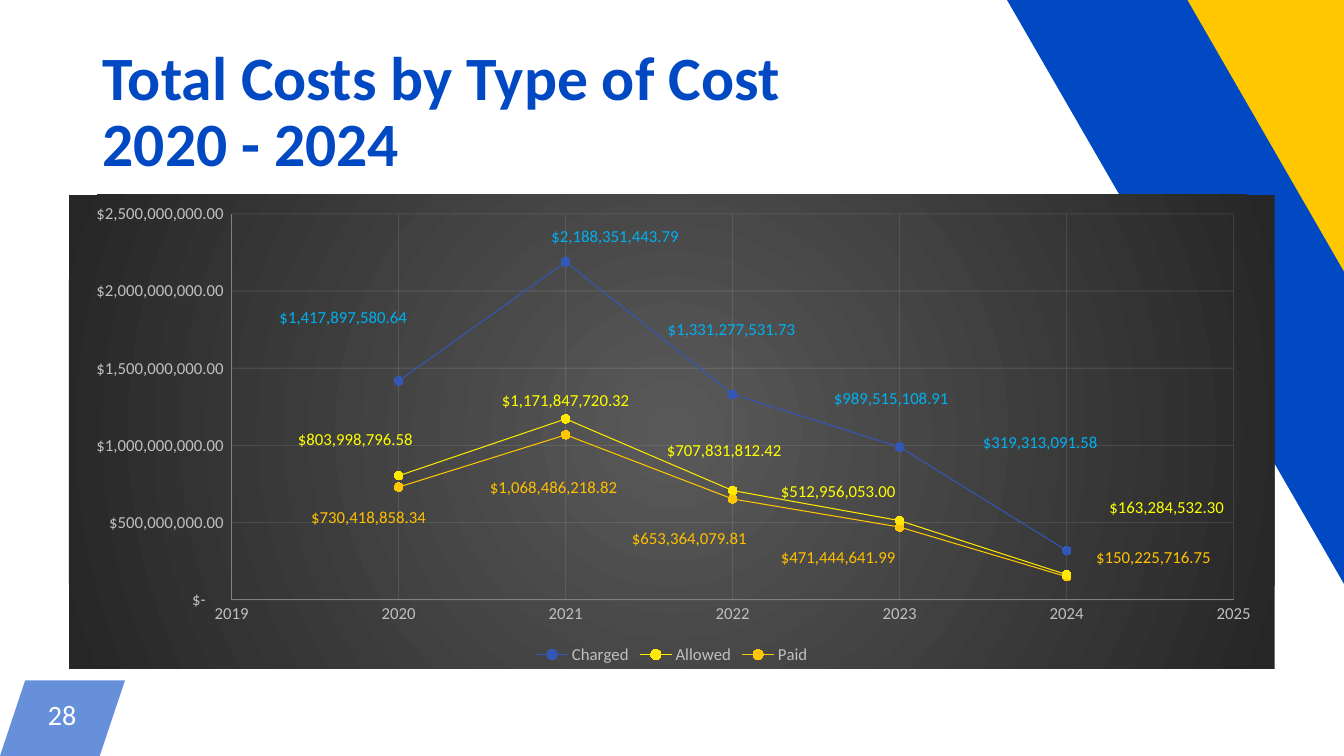
from dataclasses import dataclass

from lxml.etree import SubElement
from pptx import Presentation
from pptx.chart.data import XyChartData
from pptx.dml.color import RGBColor
from pptx.enum.chart import (
    XL_CHART_TYPE as ChartType,
    XL_LABEL_POSITION as LabelPosition,
    XL_LEGEND_POSITION as LegendPosition,
    XL_MARKER_STYLE as MarkerStyle,
    XL_TICK_MARK as TickMark,
)
from pptx.enum.text import MSO_ANCHOR as Anchor, PP_ALIGN as Align
from pptx.oxml import parse_xml
from pptx.oxml.ns import nsdecls, qn
from pptx.util import Inches, Pt

WIDTH, HEIGHT = Inches(13.333), Inches(7.5)
FONT = "Calibri"
BLUE, YELLOW, WHITE = "0049C2", "FFC700", "FFFFFF"
AXIS_TEXT, AXIS_LINE, GRID_LINE = "BFBFBF", "808080", "F2F2F2"
YEARS = range(2020, 2025)
MONEY = r'_("$"* #,##0.00_);_("$"* \(#,##0.00\);_("$"* "-"??_);_(@_)'
Pairs = list[tuple[float, float]]


@dataclass
class Band:
    corners: Pairs
    color: str
    opacity: int = 100


@dataclass
class CostSeries:
    name: str
    line: str
    marker: str
    label: str
    values: list[float]
    label_shifts: Pairs


BANDS = [
    Band([(1.88, 90), (9.3, 90), (7.42, 100), (0, 100)], BLUE, 60),
    Band([(78.53, -28.93), (91.35, -42), (127.95, 71.47), (115.13, 84.4)], YELLOW),
    Band([(71.03, -12), (81.08, -22.4), (117.83, 90.93), (107.78, 101.2)], BLUE),
]
COSTS = [
    CostSeries(
        "Charged", "3357B6", "2C54BD", "00B0F0",
        [1417897580.64, 2188351443.79, 1331277531.73, 989515108.91, 319313091.58],
        [(-4.6, -9.5), (4.1, -1.5), (-0.1, -9.7), (-0.7, -6.3), (-2.2, -19)],
    ),
    CostSeries(
        "Allowed", "FFE900", "FFE900", "FFFF00",
        [803998796.58, 1171847720.32, 707831812.42, 512956053, 163284532.3],
        [(-3.6, -3.8), (0, 0), (-0.7, -4.6), (-5.1, -2.3), (8.3, -10.3)],
    ),
    CostSeries(
        "Paid", YELLOW, YELLOW, "FFC000",
        [730418858.34, 1068486218.82, 653364079.81, 471444641.99, 150225716.75],
        [(-2.5, 10.3), (-1, 15), (-3.6, 12.2), (-5.1, 10.3), (7.2, -0.2)],
    ),
]


def rgb(color: str) -> RGBColor:
    return RGBColor.from_string(color)


def across(share: float) -> int:
    return round(WIDTH * share / 100)


def down(share: float) -> int:
    return round(HEIGHT * share / 100)


def frame(left: float, top: float, width: float, height: float) -> tuple[int, int, int, int]:
    return across(left), down(top), across(width), down(height)


def style_font(font, size: float, color: str, bold: bool = False) -> None:
    font.name, font.size, font.bold = FONT, Pt(size), bold
    font.color.rgb = rgb(color)


def style_line(line, color: str, opacity: int = 100) -> None:
    line.width = Pt(0.75)
    line.fill.solid()
    line.fill.fore_color.rgb = rgb(color)
    set_opacity(line.fill, opacity)


def set_opacity(fill, opacity: int) -> None:
    if opacity < 100:
        color_node = fill._xPr.find(f".//{qn('a:srgbClr')}")
        SubElement(color_node, qn("a:alpha")).set("val", str(opacity * 1000))


def draw_band(page, band: Band) -> None:
    points = [(across(x), down(y)) for x, y in band.corners]
    builder = page.shapes.build_freeform(*points[0], scale=1.0)
    builder.add_line_segments(points[1:], close=True)
    shape = builder.convert_to_shape()
    shape.shadow.inherit = False
    shape.fill.solid()
    shape.fill.fore_color.rgb = rgb(band.color)
    set_opacity(shape.fill, band.opacity)
    shape.line.fill.background()


def draw_title(page) -> None:
    title = page.shapes.title
    title.left, title.top, title.width, title.height = frame(6.9, 5.33, 86.27, 19.33)
    title.text_frame.text = "Total Costs by Type of Cost\v2020 - 2024"
    title.text_frame.vertical_anchor = Anchor.MIDDLE
    para = title.text_frame.paragraphs[0]
    para.alignment, para.line_spacing = Align.LEFT, 0.9
    for span in para.runs:
        style_font(span.font, 44, BLUE, bold=True)


def draw_page_number(page) -> None:
    box = page.shapes.add_textbox(*frame(1.88, 90, 5.48, 10))
    text = box.text_frame
    text.word_wrap = True
    text.vertical_anchor = Anchor.MIDDLE
    text.margin_left = text.margin_right = text.margin_top = text.margin_bottom = Inches(0.04)
    text.text = "28"
    para = text.paragraphs[0]
    para.alignment, para.line_spacing = Align.CENTER, Pt(17.7)
    style_font(para.runs[0].font, 20, WHITE)


def layout_node(**settings: object):
    entries = "".join(f'<c:{name} val="{value}"/>' for name, value in settings.items())
    return parse_xml(
        f"<c:layout {nsdecls('c')}><c:manualLayout>{entries}</c:manualLayout></c:layout>"
    )


def style_axis(axis, low: float, high: float, step: float, number_format: str) -> None:
    axis.minimum_scale, axis.maximum_scale, axis.major_unit = low, high, step
    axis.major_tick_mark = axis.minor_tick_mark = TickMark.NONE
    axis.has_major_gridlines = True
    style_line(axis.major_gridlines.format.line, GRID_LINE, 10)
    style_line(axis.format.line, AXIS_LINE)
    axis.tick_labels.number_format = number_format
    axis.tick_labels.number_format_is_linked = False
    style_font(axis.tick_labels.font, 12, AXIS_TEXT)


def style_series(series, cost: CostSeries) -> None:
    style_line(series.format.line, cost.line)
    series.marker.style, series.marker.size = MarkerStyle.CIRCLE, 6
    series.marker.format.fill.solid()
    series.marker.format.fill.fore_color.rgb = rgb(cost.marker)
    style_line(series.marker.format.line, cost.marker)
    for index in range(len(cost.values)):
        label = series.points[index].data_label
        label.position = LabelPosition.ABOVE
        style_font(label.font, 12, cost.label)


def shift_labels(chart) -> None:
    shifts = [shift for cost in COSTS for shift in cost.label_shifts]
    for label, (x, y) in zip(chart.element.iter(qn("c:dLbl")), shifts):
        if x or y:
            label.insert(1, layout_node(x=x / 100, y=y / 100))
    for labels in chart.element.iter(qn("c:dLbls")):
        for leader in labels.findall(qn("c:showLeaderLines")):
            leader.set("val", "0")
        labels.append(parse_xml(
            f"<c:extLst {nsdecls('c')}><c:ext uri=\"{{CE6537A1-D6FC-4f65-9D91-7224C49458BB}}\" "
            'xmlns:c15="http://schemas.microsoft.com/office/drawing/2012/chart">'
            '<c15:showLeaderLines val="0"/></c:ext></c:extLst>'
        ))


def fill_background(chart) -> None:
    stops = "".join(
        f'<a:gs pos="{pos}"><a:srgbClr val="{color}"/></a:gs>'
        for pos, color in ((0, "595959"), (100000, "262626"))
    )
    chart.element.find(qn("c:chart")).addnext(parse_xml(
        f"<c:spPr {nsdecls('c', 'a')}><a:gradFill><a:gsLst>{stops}</a:gsLst>"
        '<a:path path="circle"><a:fillToRect l="50000" t="50000" r="50000" b="50000"/></a:path>'
        "</a:gradFill><a:ln><a:noFill/></a:ln></c:spPr>"
    ))


def place_plot(chart) -> None:
    plot_area = chart.element.find(f".//{qn('c:plotArea')}")
    for old in plot_area.findall(qn("c:layout")):
        plot_area.remove(old)
    plot_area.insert(0, layout_node(
        layoutTarget="inner", xMode="edge", yMode="edge", x=0.135, y=0.04, w=0.831, h=0.815
    ))
    plot_area.append(parse_xml(f"<c:spPr {nsdecls('c', 'a')}><a:noFill/></c:spPr>"))


def draw_chart(page) -> None:
    data = XyChartData(number_format=MONEY)
    for cost in COSTS:
        series_data = data.add_series(cost.name)
        for year, value in zip(YEARS, cost.values):
            series_data.add_data_point(year, value)
    chart = page.shapes.add_chart(
        ChartType.XY_SCATTER_LINES, *frame(5.13, 25.78, 89.72, 62.67), data
    ).chart
    chart.has_title = False
    style_font(chart.font, 12, "000000")
    chart.plots[0].vary_by_categories = False
    style_axis(chart.category_axis, 2019, 2025, 1, "General")
    style_axis(chart.value_axis, 0, 2.5e9, 5e8, MONEY)
    chart.has_legend = True
    chart.legend.position = LegendPosition.BOTTOM
    chart.legend.include_in_layout = False
    style_font(chart.legend.font, 12, AXIS_TEXT)
    for series, cost in zip(chart.plots[0].series, COSTS):
        style_series(series, cost)
    shift_labels(chart)
    place_plot(chart)
    fill_background(chart)


def main() -> None:
    deck = Presentation()
    deck.slide_width, deck.slide_height = WIDTH, HEIGHT
    page = deck.slides.add_slide(deck.slide_layouts.get_by_name("Title Only"))
    for band in BANDS:
        draw_band(page, band)
    draw_page_number(page)
    draw_title(page)
    draw_chart(page)
    deck.save("out.pptx")


if __name__ == "__main__":
    main()
